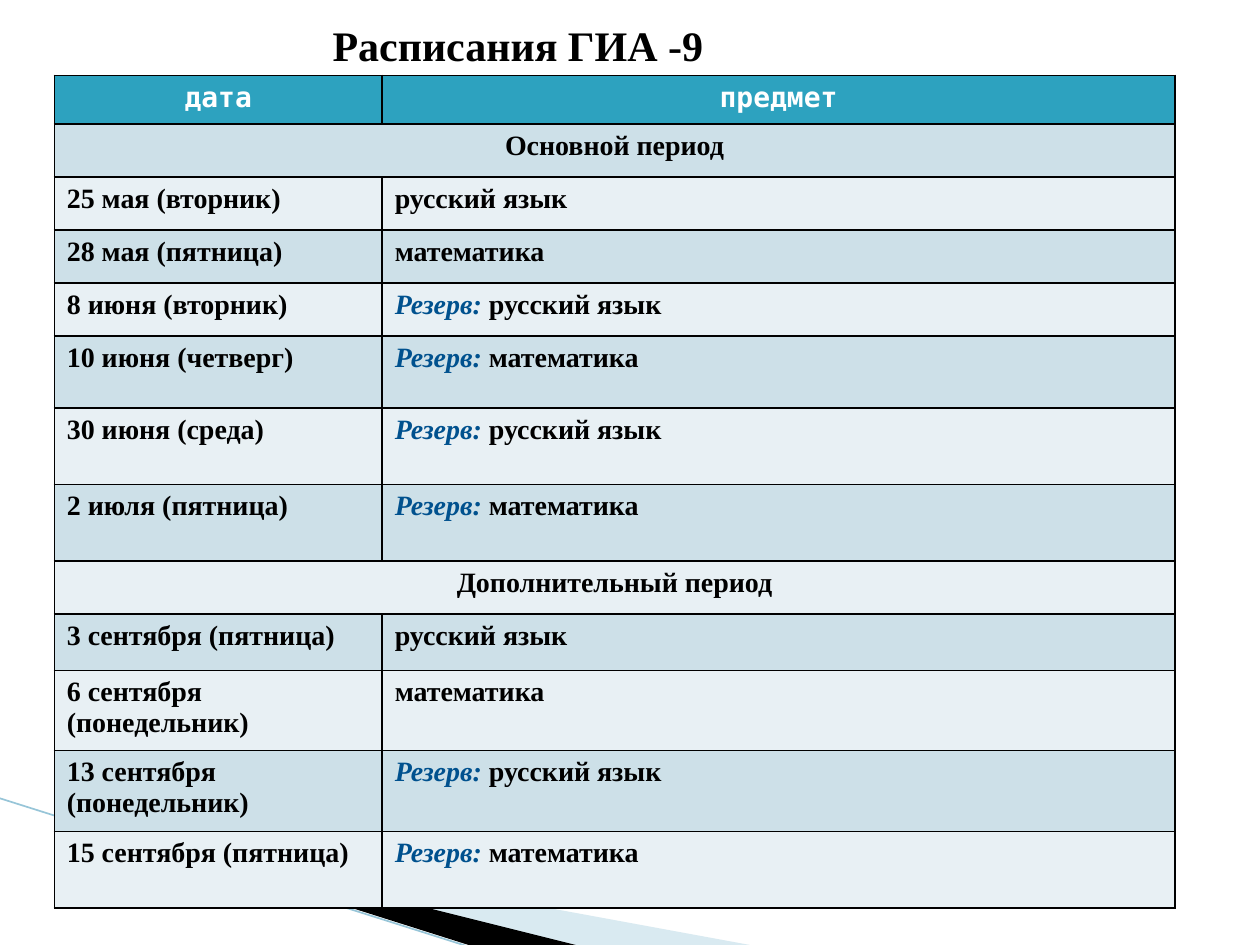
from dataclasses import dataclass

import pptx
import pptx.dml.color
import pptx.enum.shapes
import pptx.enum.text
import pptx.oxml
import pptx.oxml.ns
import pptx.util

Pt = pptx.util.Pt
CENTER = pptx.enum.text.PP_ALIGN.CENTER
MIDDLE = pptx.enum.text.MSO_ANCHOR.MIDDLE
NS = pptx.oxml.ns.nsdecls("a")
SERIF, MONO = "Times New Roman", "DejaVu Sans Mono"
BLACK, WHITE, BLUE = "000000", "FFFFFF", "00518E"
HEADER_FILL, BANDS = "2DA2BF", ("E8F0F4", "CDE0E8")
RESERVE = "Резерв: "


@dataclass
class Row:
    height: float
    left: str
    subject: str = ""
    reserve: bool = False

    @property
    def is_section(self) -> bool:
        return not self.subject


@dataclass
class Wedge:
    points: list[tuple[float, float]]
    color: str
    alpha: int = 100


WEDGES = [
    Wedge([(39.6, 468.5), (428.5, 540), (328.5, 540)], "A0CBDC", 40),
    Wedge([(38.2, 467.3), (329, 540), (267.8, 540)], BLACK),
]

ROWS = [
    Row(28, "дата", "предмет"),
    Row(30.3, "Основной период"),
    Row(30.3, "25 мая (вторник)", "русский язык"),
    Row(30.3, "28 мая (пятница)", "математика"),
    Row(30.3, "8 июня (вторник)", "русский язык", True),
    Row(41.1, "10 июня (четверг)", "математика", True),
    Row(43.7, "30 июня (среда)", "русский язык", True),
    Row(43.7, "2 июля (пятница)", "математика", True),
    Row(30.3, "Дополнительный период"),
    Row(32.4, "3 сентября (пятница)", "русский язык"),
    Row(43.7, "6 сентября (понедельник)", "математика"),
    Row(46.4, "13 сентября (понедельник)", "русский язык", True),
    Row(43.7, "15 сентября (пятница)", "математика", True),
]


def rgb(color: str) -> pptx.dml.color.RGBColor:
    return pptx.dml.color.RGBColor.from_string(color)


def style(r, size: float, color: str, font: str = SERIF, italic: bool = False) -> None:
    r.font.size, r.font.name = Pt(size), font
    r.font.bold, r.font.italic = True, italic
    r.font.color.rgb = rgb(color)


def draw_wedge(s, wedge: Wedge) -> None:
    points = [(Pt(x), Pt(y)) for x, y in wedge.points]
    fb = s.shapes.build_freeform(*points[0])
    fb.add_line_segments(points[1:], close=True)
    sp = fb.convert_to_shape()
    sp.shadow.inherit = False
    sp.fill.solid()
    sp.fill.fore_color.rgb = rgb(wedge.color)
    sp.line.fill.background()
    if wedge.alpha < 100:
        color = sp.fill._xPr.find(".//" + pptx.oxml.ns.qn("a:srgbClr"))
        color.append(pptx.oxml.parse_xml(f'<a:alpha {NS} val="{wedge.alpha * 1000}"/>'))


def draw_edge_line(s) -> None:
    line = s.shapes.add_connector(
        pptx.enum.shapes.MSO_CONNECTOR.STRAIGHT, Pt(-0.7), Pt(456), Pt(268), Pt(541))
    line.line.color.rgb = rgb("97C5D8")
    line.line.width = Pt(0.95)
    line._element.spPr.append(pptx.oxml.parse_xml(f"<a:effectLst {NS}/>"))


def draw_title(s, text: str) -> None:
    tf = s.shapes.add_textbox(Pt(-46), Pt(15), Pt(684), Pt(21)).text_frame
    tf.word_wrap = True
    tf.vertical_anchor = MIDDLE
    tf.text = text
    p = tf.paragraphs[0]
    p.alignment = CENTER
    style(p.runs[0], 24, BLACK)


def format_cell(cell, fill: str) -> None:
    # Borders go before the fill in the cell properties
    tcPr = cell._tc.get_or_add_tcPr()
    for side in ("lnL", "lnR", "lnT", "lnB"):
        tcPr.append(pptx.oxml.parse_xml(
            f'<a:{side} {NS} w="{Pt(1)}"><a:solidFill><a:srgbClr val="{BLACK}"/>'
            f"</a:solidFill></a:{side}>"))
    cell.fill.solid()
    cell.fill.fore_color.rgb = rgb(fill)


def fill_text(cell, text: str, header: bool, centered: bool, reserve: bool) -> None:
    p = cell.text_frame.paragraphs[0]
    p.text = RESERVE if reserve else text
    if centered:
        p.alignment = CENTER
    if reserve:
        style(p.runs[0], 16, BLUE, italic=True)
        r = p.add_run()
        r.text = text
    style(p.runs[-1], 16, WHITE if header else BLACK, MONO if header else SERIF)


def draw_schedule(s, rows: list[Row]) -> None:
    widths = (187.4, 453)
    table = s.shapes.add_table(len(rows), len(widths), Pt(31), Pt(43), Pt(sum(widths)),
                               Pt(sum(row.height for row in rows))).table
    table.first_row = table.horz_banding = False
    for column, width in zip(table.columns, widths):
        column.width = Pt(width)
    for i, row in enumerate(rows):
        table.rows[i].height = Pt(row.height)
        header = i == 0
        left, right = table.cell(i, 0), table.cell(i, 1)
        for cell in (left, right):
            format_cell(cell, HEADER_FILL if header else BANDS[i % 2])
        fill_text(left, row.left, header, header or row.is_section, False)
        if row.is_section:
            left.merge(right)
        else:
            fill_text(right, row.subject, header, header, row.reserve)


def main() -> None:
    prs = pptx.Presentation()
    prs.slide_width, prs.slide_height = Pt(720), Pt(540)
    s = prs.slides.add_slide(prs.slide_layouts[6])

    # Corner decoration
    for wedge in WEDGES:
        draw_wedge(s, wedge)
    draw_edge_line(s)

    # Title and exam schedule
    draw_title(s, "Расписания ГИА -9")
    draw_schedule(s, ROWS)

    prs.save("out.pptx")


if __name__ == "__main__":
    main()
